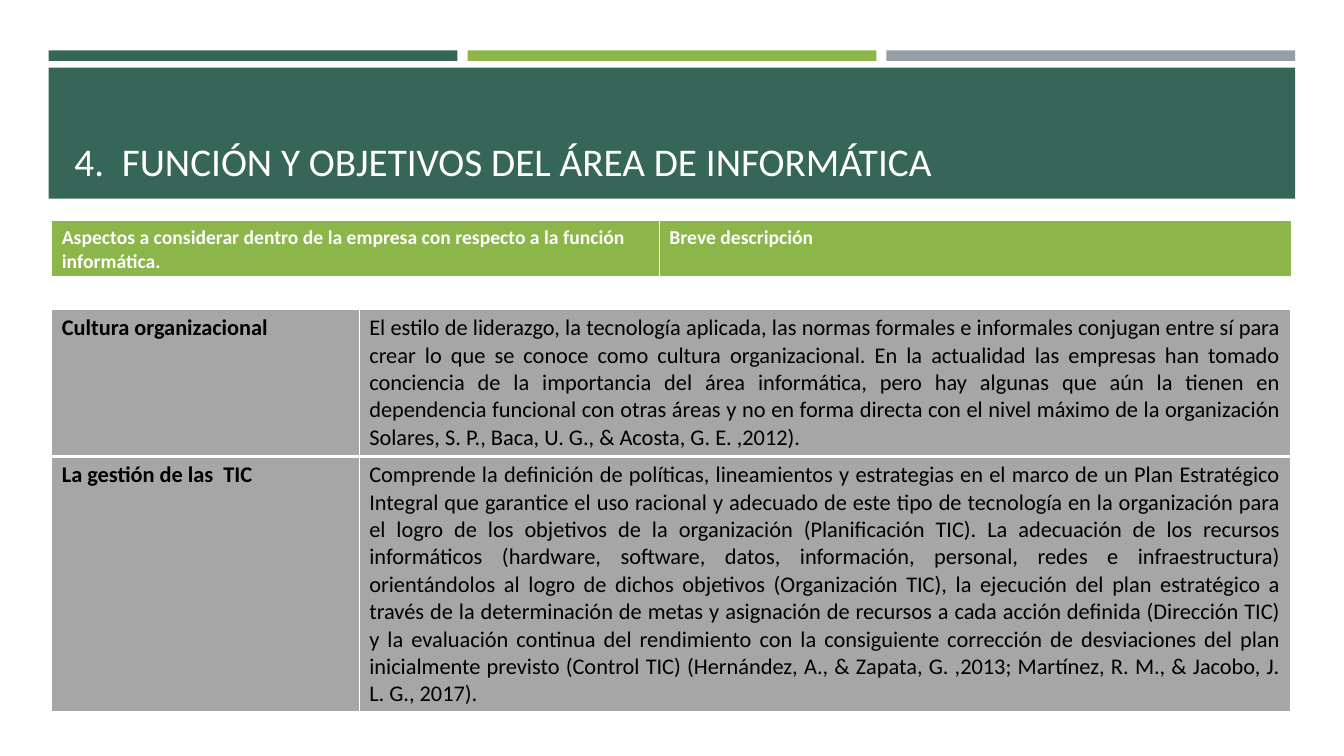
from lxml.etree import SubElement
from pptx import Presentation
from pptx.dml.color import RGBColor
from pptx.enum.shapes import MSO_SHAPE as Shape
from pptx.enum.text import MSO_ANCHOR as Anchor, PP_ALIGN as Align
from pptx.oxml import parse_xml
from pptx.oxml.ns import nsdecls, qn
from pptx.util import Pt

TEAL = RGBColor(0x36, 0x66, 0x58)
GREEN = RGBColor(0x8C, 0xB6, 0x4A)
SLATE = RGBColor(0x96, 0x9F, 0xA7)
GRAY = RGBColor(0xA6, 0xA6, 0xA6)
WHITE = RGBColor(0xFF, 0xFF, 0xFF)
BLACK = RGBColor(0, 0, 0)
FONT = "Calibri"

TITLE = "4.  FUNCIÓN Y OBJETIVOS DEL ÁREA DE INFORMÁTICA"
HEADINGS = [[
    "Aspectos a considerar dentro de la empresa con respecto a la función informática.",
    "Breve descripción",
]]
ASPECTS = [
    ["Cultura organizacional",
     "El estilo de liderazgo, la tecnología aplicada, las normas formales e informales "
     "conjugan entre sí para crear lo que se conoce como cultura organizacional. En la "
     "actualidad las empresas han tomado conciencia de la importancia del área informática, "
     "pero hay algunas que aún la tienen en dependencia funcional con otras áreas y no en "
     "forma directa con el nivel máximo de la organización Solares, S. P., Baca, U. G., & "
     "Acosta, G. E. ,2012)."],
    ["La gestión de las  TIC",
     "Comprende la definición de políticas, lineamientos y estrategias en el marco de un Plan "
     "Estratégico Integral que garantice el uso racional y adecuado de este tipo de tecnología "
     "en la organización para el logro de los objetivos de la organización (Planificación TIC). "
     "La adecuación de los recursos informáticos (hardware, software, datos, información, "
     "personal, redes e infraestructura) orientándolos al logro de dichos objetivos "
     "(Organización TIC), la ejecución del plan estratégico a través de la determinación de "
     "metas y asignación de recursos a cada acción definida (Dirección TIC) y la evaluación "
     "continua del rendimiento con la consiguiente corrección de desviaciones del plan "
     "inicialmente previsto (Control TIC) (Hernández, A., & Zapata, G. ,2013; Martínez, R. M., "
     "& Jacobo, J. L. G., 2017)."],
]


def add_bar(page, left, top, width, height, color):
    """Draw a plain filled rectangle."""
    bar = page.shapes.add_shape(Shape.RECTANGLE, Pt(left), Pt(top), Pt(width), Pt(height))
    bar.shadow.inherit = False
    bar.fill.solid()
    bar.fill.fore_color.rgb = color
    bar.line.fill.background()


def add_header(page, left, top, width):
    """Place three accent bars, the banner below them and the title on it."""
    gap = 7.2
    bar_width = (width - 2 * gap) / 3
    for index, color in enumerate((TEAL, GREEN, SLATE)):
        add_bar(page, left + index * (bar_width + gap), top, bar_width, 7.6, color)
    add_bar(page, left, top + 12.3, width, 93.6, TEAL)

    title = page.shapes.title
    title.element.getparent().append(title.element)
    title.left, title.top = Pt(left + 11.2), Pt(top + 19.4)
    title.width, title.height = Pt(width - 22.4), Pt(80)
    frame = title.text_frame
    frame.text = TITLE
    frame.word_wrap = True
    frame.vertical_anchor = Anchor.BOTTOM
    para = frame.paragraphs[0]
    para.alignment = Align.LEFT
    para.line_spacing = 0.9
    para.font.name, para.font.size = FONT, Pt(28)
    para.font.color.rgb = WHITE


def set_borders(cell, top_width):
    """Give a cell white edges with a heavy bottom one."""
    properties = cell._tc.get_or_add_tcPr()
    edges = (("L", 1), ("R", 1), ("T", top_width), ("B", 3))
    for index, (side, width) in enumerate(edges):
        edge = parse_xml(f'<a:ln{side} {nsdecls("a")} w="{Pt(width)}"/>')
        fill = SubElement(edge, qn("a:solidFill"))
        SubElement(fill, qn("a:srgbClr"), val=str(WHITE))
        properties.insert(index, edge)


def add_grid(page, left, top, columns, heights, texts, size, fill, ink, is_header):
    """Place a table whose cells share one fill, ink and text size."""
    grid = page.shapes.add_table(len(heights), len(columns), Pt(left), Pt(top),
                                 Pt(sum(columns)), Pt(sum(heights))).table
    grid.first_row = grid.horz_banding = False
    for column, width in zip(grid.columns, columns):
        column.width = Pt(width)
    for row_index, height in enumerate(heights):
        grid.rows[row_index].height = Pt(height)
        for column_index, text in enumerate(texts[row_index]):
            cell = grid.cell(row_index, column_index)
            cell.text = text
            cell.fill.solid()
            cell.fill.fore_color.rgb = fill
            set_borders(cell, 3 if row_index else 1)
            para = cell.text_frame.paragraphs[0]
            is_body = column_index > 0 and not is_header
            para.alignment = Align.JUSTIFY if is_body else Align.LEFT
            para.font.name, para.font.size = FONT, Pt(size)
            para.font.bold = not is_body
            para.font.color.rgb = ink


def main():
    """Build the deck and save it."""
    deck = Presentation()
    deck.slide_width, deck.slide_height = Pt(960), Pt(540)
    page = deck.slides.add_slide(deck.slide_layouts[5])
    add_header(page, 34.8, 36, 890.4)
    add_grid(page, 37, 157.5, (434, 451.5), (40,), HEADINGS, 14, GREEN, WHITE, True)
    add_grid(page, 37, 221, (219.6, 665.3), (104.7, 183), ASPECTS, 16, GRAY, BLACK, False)
    deck.save("out.pptx")


if __name__ == "__main__":
    main()
